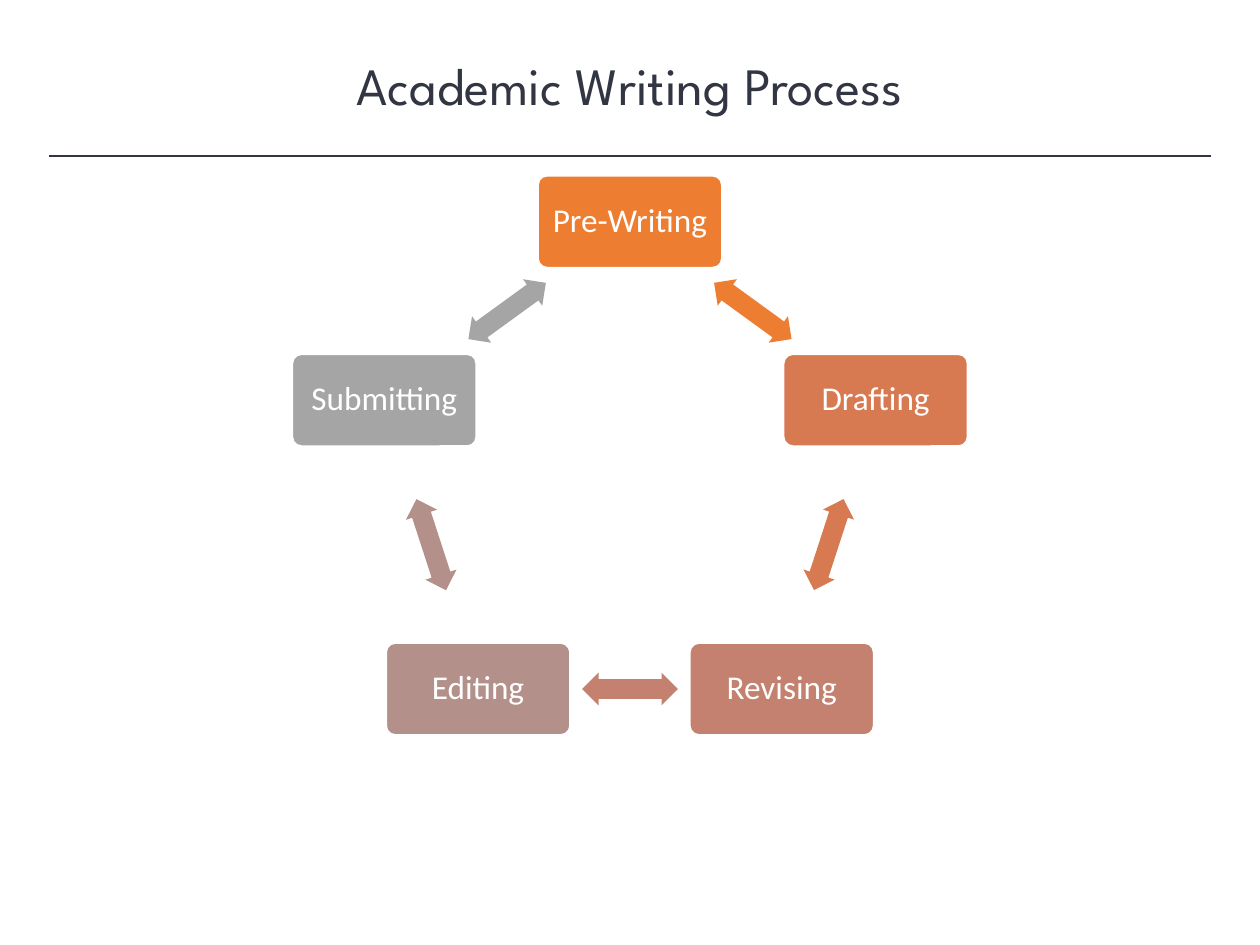
from math import cos, pi, sin

from lxml import etree
from pptx import Presentation
from pptx.dml.color import RGBColor
from pptx.enum.shapes import MSO_CONNECTOR, MSO_SHAPE
from pptx.enum.text import MSO_ANCHOR, PP_ALIGN
from pptx.oxml.ns import qn
from pptx.util import Inches, Pt

BOX = MSO_SHAPE.ROUNDED_RECTANGLE
ARROW = MSO_SHAPE.LEFT_RIGHT_ARROW
LINE = MSO_CONNECTOR.STRAIGHT
CENTER = PP_ALIGN.CENTER
MIDDLE = MSO_ANCHOR.MIDDLE

COLORS = {
    "ink": "323542",
    "white": "FFFFFF",
    "Pre-Writing": "ED7D31",
    "Drafting": "D87A51",
    "Revising": "C48170",
    "Editing": "B4908B",
    "Submitting": "A5A5A5",
}
TITLE = "Academic Writing Process"
STEPS = ["Pre-Writing", "Drafting", "Revising", "Editing", "Submitting"]

MID_X, MID_Y, RADIUS = 5, 3.81, 2.05
BOX_W, BOX_H = 1.46, 0.73
ARROW_W, ARROW_H = 0.76, 0.26


def color(name):
    return RGBColor.from_string(COLORS[name])


def write(frame, text, font, size, ink):
    frame.word_wrap = True
    par = frame.paragraphs[0]
    par.alignment = CENTER
    run = par.add_run()
    run.text = text
    run.font.name = font
    run.font.size = Pt(size)
    run.font.color.rgb = color(ink)
    return par


def add_shape(slide, kind, x, y, w, h, fill):
    shape = slide.shapes.add_shape(
        kind, Inches(x - w / 2), Inches(y - h / 2), Inches(w), Inches(h))
    shape.shadow.inherit = False
    shape.fill.solid()
    shape.fill.fore_color.rgb = color(fill)
    shape.line.fill.background()
    return shape


def add_title(slide):
    box = slide.shapes.add_textbox(0, Inches(0.37), Inches(10), Inches(0.61))
    write(box.text_frame, TITLE, "League Spartan", 30, "ink")
    rule = slide.shapes.add_connector(
        LINE, Inches(0.39), Inches(1.24), Inches(9.61), Inches(1.24))
    rule.line.color.rgb = color("ink")
    rule.line.width = Pt(1)
    etree.SubElement(rule._element.spPr, qn("a:effectLst"))


def add_step(slide, step, x, y):
    box = add_shape(slide, BOX, x, y, BOX_W, BOX_H, step)
    box.adjustments[0] = 0.1
    box.line.color.rgb = color("white")
    box.line.width = Pt(1)
    frame = box.text_frame
    frame.vertical_anchor = MIDDLE
    frame.margin_left = frame.margin_right = Inches(0.08)
    frame.margin_top = frame.margin_bottom = Inches(0.08)
    par = write(frame, step, "Calibri", 19, "white")
    par.line_spacing = 0.9


def add_cycle(slide):
    count = len(STEPS)
    turn = 2 * pi / count
    spots = [(MID_X + RADIUS * sin(i * turn), MID_Y - RADIUS * cos(i * turn))
             for i in range(count)]
    for i, step in enumerate(STEPS):
        x, y = spots[i]
        next_x, next_y = spots[(i + 1) % count]
        add_step(slide, step, x, y)
        arrow = add_shape(slide, ARROW, (x + next_x) / 2, (y + next_y) / 2,
                          ARROW_W, ARROW_H, step)
        arrow.adjustments[0] = 0.6
        arrow.adjustments[1] = 0.5
        arrow.rotation = (i + 0.5) * 360 / count


def main():
    deck = Presentation()
    deck.slide_width, deck.slide_height = Inches(10), Inches(7.5)
    slide = deck.slides.add_slide(deck.slide_layouts[6])
    add_title(slide)
    add_cycle(slide)
    deck.save("out.pptx")


if __name__ == "__main__":
    main()
